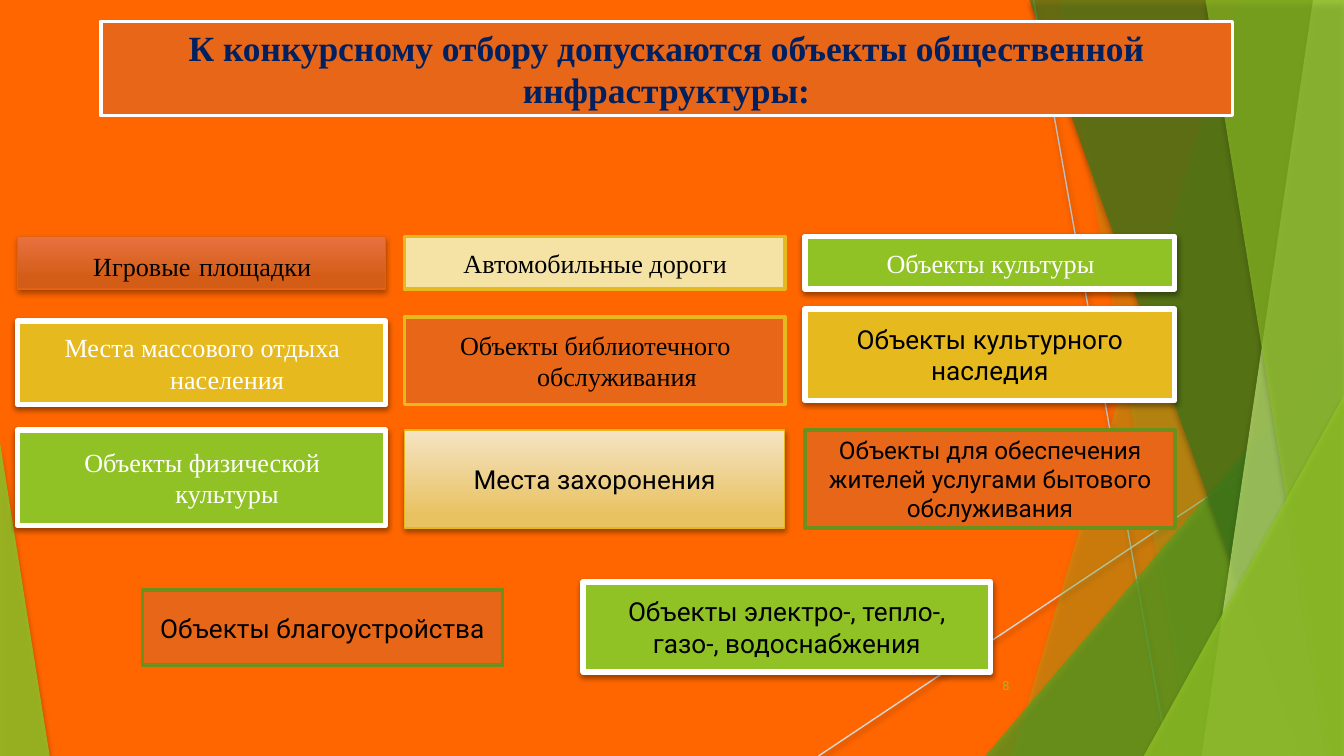
from pptx import Presentation
from pptx.dml.color import RGBColor
from pptx.enum.shapes import MSO_CONNECTOR, MSO_SHAPE
from pptx.enum.text import MSO_ANCHOR, MSO_AUTO_SIZE, PP_ALIGN
from pptx.oxml.ns import qn
from pptx.util import Inches, Pt
from lxml.etree import SubElement

WIDTH = 10
HEIGHT = WIDTH * 9 / 16
SERIF, SANS = "Times New Roman", "Roboto"

BACKGROUND = RGBColor(0xFF, 0x66, 0x00)
NAVY = RGBColor(0x00, 0x20, 0x60)
BLACK = RGBColor(0x00, 0x00, 0x00)
WHITE = RGBColor(0xFF, 0xFF, 0xFF)
GREEN = RGBColor(0x90, 0xC2, 0x26)
LEAF = RGBColor(0x54, 0xA0, 0x21)
FOREST = RGBColor(0x3F, 0x78, 0x19)
LIME = RGBColor(0xC0, 0xE4, 0x74)
OLIVE = RGBColor(0x6B, 0x90, 0x1C)
ORANGE = RGBColor(0xE7, 0x66, 0x18)
GOLD = RGBColor(0xE6, 0xB9, 0x1E)
CREAM = RGBColor(0xF5, 0xE3, 0xA5)
GRAY = RGBColor(0xBF, 0xBF, 0xBF)
LIGHT_GRAY = RGBColor(0xD9, 0xD9, 0xD9)

# Shadows: opacity %, blur pt, distance pt
SOFT, CRISP = (35, 3, 2), (38, 3.1, 1.6)

# Backdrop: thin lines, then translucent facets from back to front
RAYS = [((7.69, 0), (8.69, HEIGHT), GRAY), ((WIDTH, 3.02), (6.09, HEIGHT), LIGHT_GRAY)]
# Bands reach the right edge: x at top, x at bottom
# Triangles: left, top, width, apex side (0 left, 1 right)
FACETS = [
    ("band", (9.21, 7.53), GREEN, 30),
    ("band", (7.88, 8.87), GREEN, 20),
    ("triangle", (7.33, 2.5, 2.67, 1), LEAF, 72),
    ("band", (7.66, 9.68), FOREST, 70),
    ("band", (9.77, 8.94), LIME, 70),
    ("band", (8.97, 9.88), GREEN, 65),
    ("triangle", (8.51, 2.94, 1.49, 1), GREEN, 80),
    ("triangle", (0, 3.29, 0.37, 0), GREEN, 85),
]

TITLE = "К конкурсному отбору допускаются объекты общественной инфраструктуры:"
PAGE_NUMBER = "8"

# Card styles: fill (colour, or gradient stops from bottom to top), line, line pt, shadow
STYLES = {
    "rust": ([(0.22, RGBColor(0xD3, 0x5D, 0x16)), (1, RGBColor(0xE8, 0x71, 0x41))],
             RGBColor(0xE6, 0x62, 0x12), 0.75, SOFT),
    "sand": ([(0.12, RGBColor(0xE8, 0xC1, 0x60)), (1, RGBColor(0xF5, 0xE4, 0xC4))],
             RGBColor(0xE5, 0xB7, 0x18), 0.75, CRISP),
    "cream": (CREAM, GOLD, 2, None),
    "green": (GREEN, WHITE, 3, CRISP),
    "gold": (GOLD, WHITE, 3, CRISP),
    "orange-gold": (ORANGE, GOLD, 2, None),
    "orange-olive": (ORANGE, OLIVE, 2, None),
}

# Columns: left, width; the last two hold the bottom row
COLUMNS = [(0.13, 2.74), (3.01, 2.83), (5.99, 2.75), (1.06, 2.68), (4.34, 3.03)]
# Cards: column, top, height, style, font, size, colour, space before, runs (text, size)
CARDS = [
    (0, 1.76, 0.39, "rust", SERIF, 14, BLACK, 3.6, [("Игровые", 14), (" ", 18), ("площадки", 14)]),
    (1, 1.76, 0.39, "cream", SERIF, 14, BLACK, 2.8, "Автомобильные дороги"),
    (2, 1.76, 0.39, "green", SERIF, 14, WHITE, 2.8, "Объекты культуры"),
    (0, 3.2, 0.71, "green", SERIF, 14, WHITE, 2.8, "Объекты физической культуры"),
    (0, 2.39, 0.62, "gold", SERIF, 14, WHITE, 2.8, "Места массового отдыха населения"),
    (1, 2.36, 0.65, "orange-gold", SERIF, 14, BLACK, 2.8, "Объекты библиотечного обслуживания "),
    (1, 3.2, 0.73, "sand", SANS, 14, BLACK, 0, "Места захоронения"),
    (2, 2.3, 0.68, "gold", SANS, 14, BLACK, 0, "Объекты культурного наследия"),
    (2, 3.2, 0.73, "orange-olive", SANS, 13, BLACK, 0,
     "Объекты для обеспечения жителей услугами бытового обслуживания"),
    (4, 4.33, 0.67, "green", SANS, 14, BLACK, 0, "Объекты электро-, тепло-, газо-, водоснабжения"),
    (3, 4.39, 0.56, "orange-olive", SANS, 14, BLACK, 0, "Объекты благоустройства"),
]


def set_shadow(shape, shadow):
    """Replace the theme shadow with a downward one, or with none."""
    properties = shape._element.spPr
    for old in properties.findall(qn("a:effectLst")):
        properties.remove(old)
    effects = SubElement(properties, qn("a:effectLst"))
    if shadow:
        opacity, blur, distance = shadow
        outer = SubElement(effects, qn("a:outerShdw"), blurRad=str(Pt(blur)),
                           dist=str(Pt(distance)), dir="5400000", rotWithShape="0")
        color = SubElement(outer, qn("a:srgbClr"), val="000000")
        SubElement(color, qn("a:alpha"), val=str(opacity * 1000))


def paint(shape, fill, line, line_width, shadow):
    if isinstance(fill, list):
        shape.fill.gradient()
        shape.fill.gradient_angle = 90
        for stop, (position, color) in zip(shape.fill.gradient_stops, fill):
            stop.position = position
            stop.color.rgb = color
    else:
        shape.fill.solid()
        shape.fill.fore_color.rgb = fill
    shape.line.color.rgb = line
    shape.line.width = Pt(line_width)
    set_shadow(shape, shadow)


def write(shape, runs, font, size, color, bold=False, align=PP_ALIGN.CENTER):
    frame = shape.text_frame
    frame.word_wrap = True
    frame.auto_size = MSO_AUTO_SIZE.NONE
    frame.vertical_anchor = MSO_ANCHOR.MIDDLE
    paragraph = frame.paragraphs[0]
    paragraph.alignment = align
    paragraph.font.name, paragraph.font.size = font, Pt(size)
    paragraph.font.color.rgb, paragraph.font.bold = color, bold
    if isinstance(runs, str):
        paragraph.add_run().text = runs
    else:
        for text, run_size in runs:
            run = paragraph.add_run()
            run.text = text
            run.font.size = Pt(run_size)
    return paragraph


def add_facet(shapes, kind, place, color, opacity):
    if kind == "band":
        top_x, bottom_x = place
        outline = shapes.build_freeform(Inches(top_x), 0)
        outline.add_line_segments([(Inches(x), Inches(y)) for x, y in
                                   [(WIDTH, 0), (WIDTH, HEIGHT), (bottom_x, HEIGHT)]])
        facet = outline.convert_to_shape()
    else:
        left, top, width, apex = place
        facet = shapes.add_shape(MSO_SHAPE.ISOSCELES_TRIANGLE, Inches(left), Inches(top),
                                 Inches(width), Inches(HEIGHT - top))
        facet.adjustments[0] = apex
    facet.fill.solid()
    facet.fill.fore_color.rgb = color
    tint = facet._element.spPr.find(qn("a:solidFill"))[0]
    SubElement(tint, qn("a:alpha"), val=str(opacity * 1000))
    facet.line.fill.background()
    set_shadow(facet, SOFT)


def main():
    deck = Presentation()
    deck.slide_width, deck.slide_height = Inches(WIDTH), Inches(HEIGHT)
    slide = deck.slides.add_slide(deck.slide_layouts[5])
    shapes = slide.shapes
    slide.background.fill.solid()
    slide.background.fill.fore_color.rgb = BACKGROUND

    # Backdrop
    for start, end, color in RAYS:
        ray = shapes.add_connector(MSO_CONNECTOR.STRAIGHT, *map(Inches, start + end))
        ray.line.color.rgb = color
        ray.line.width = Pt(0.75)
        set_shadow(ray, CRISP)
    for facet in FACETS:
        add_facet(shapes, *facet)

    # Title, brought in front of the backdrop
    title = shapes.title
    title.left, title.top, title.width, title.height = map(Inches, (0.75, 0.16, 8.42, 0.7))
    paint(title, ORANGE, WHITE, 2, None)
    write(title, TITLE, SERIF, 19, NAVY, bold=True)
    title._element.getparent().append(title._element)

    # Page number
    page = shapes.add_textbox(*map(Inches, (7.05, 4.95, 0.56, 0.3)))
    write(page, PAGE_NUMBER, SANS, 6.8, GREEN, align=PP_ALIGN.RIGHT)

    # Cards; the serif ones have a hanging indent
    for column, top, height, style, font, size, color, space_before, runs in CARDS:
        left, width = COLUMNS[column]
        card = shapes.add_shape(MSO_SHAPE.RECTANGLE, *map(Inches, (left, top, width, height)))
        paint(card, *STYLES[style])
        paragraph = write(card, runs, font, size, color)
        paragraph.space_before = Pt(space_before)
        if font == SERIF:
            indents = paragraph._p.get_or_add_pPr()
            indents.set("marL", str(Inches(0.38)))
            indents.set("indent", str(Inches(-0.37)))

    deck.save("out.pptx")


if __name__ == "__main__":
    main()
